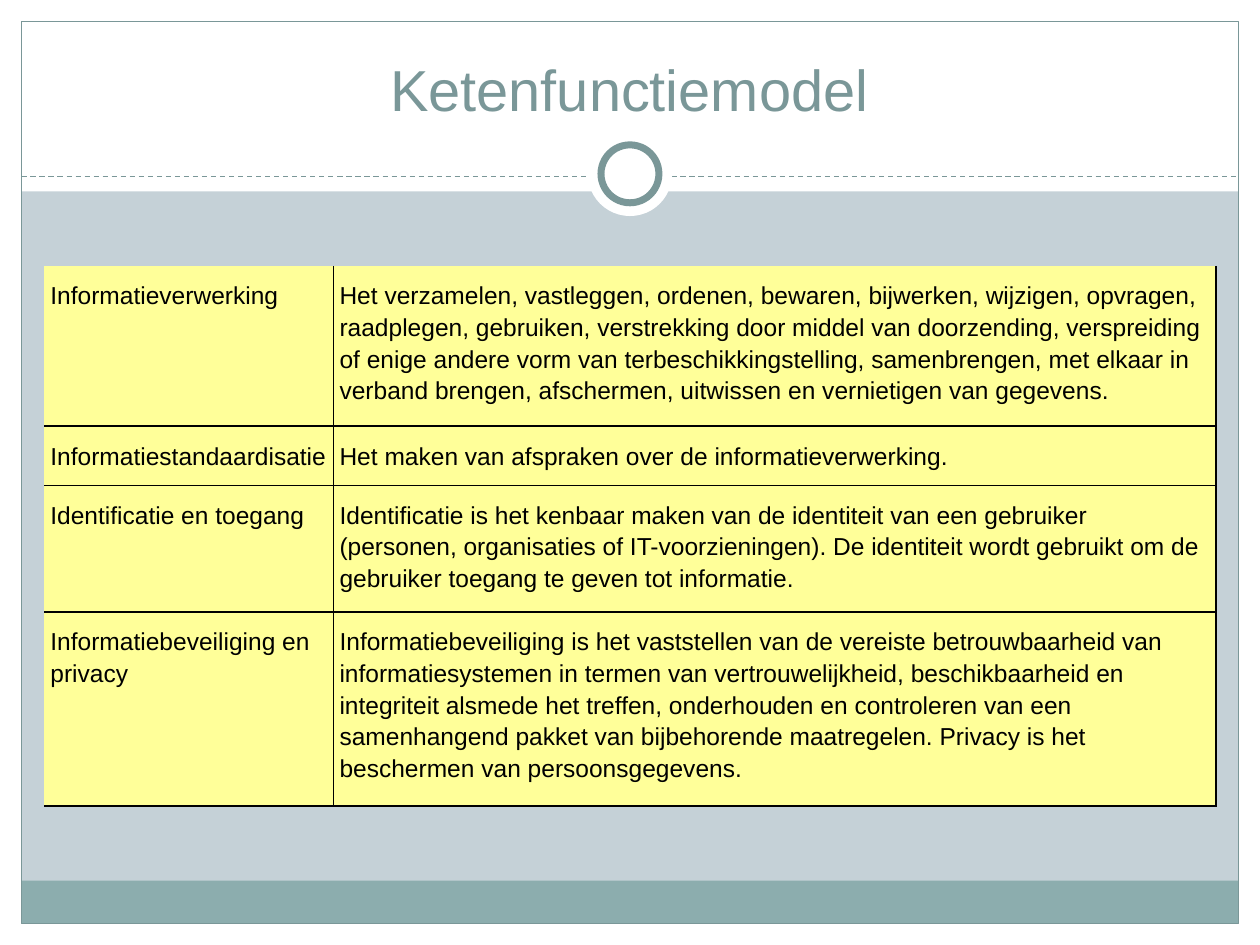
from lxml.etree import SubElement
from pptx import Presentation
from pptx.dml.color import RGBColor
from pptx.enum.dml import MSO_LINE
from pptx.enum.shapes import MSO_CONNECTOR, MSO_SHAPE
from pptx.enum.text import MSO_ANCHOR, PP_ALIGN
from pptx.oxml.ns import qn
from pptx.util import Inches, Pt

COLS, ROWS = 100, 75  # square grid cells over the whole slide
EDGE = 1.7
MID = COLS / 2
RING = 13.8  # row of the ring's centre
FONT = "Arial"
HUES = {"back": "C5D1D7", "white": "FFFFFF", "band": "8CADAE",
        "line": "7A9798", "cell": "FFFF99", "ink": "000000"}
TERMS = [
    ("Informatieverwerking",
     "Het verzamelen, vastleggen, ordenen, bewaren, bijwerken, wijzigen, "
     "opvragen, raadplegen, gebruiken, verstrekking door middel van "
     "doorzending, verspreiding of enige andere vorm van "
     "terbeschikkingstelling, samenbrengen, met elkaar in verband brengen, "
     "afschermen, uitwissen en vernietigen van gegevens."),
    ("Informatiestandaardisatie",
     "Het maken van afspraken over de informatieverwerking."),
    ("Identificatie en toegang",
     "Identificatie is het kenbaar maken van de identiteit van een gebruiker "
     "(personen, organisaties of IT-voorzieningen). De identiteit wordt "
     "gebruikt om de gebruiker toegang te geven tot informatie."),
    ("Informatiebeveiliging en privacy",
     "Informatiebeveiliging is het vaststellen van de vereiste "
     "betrouwbaarheid van informatiesystemen in termen van vertrouwelijkheid, "
     "beschikbaarheid en integriteit alsmede het treffen, onderhouden en "
     "controleren van een samenhangend pakket van bijbehorende maatregelen. "
     "Privacy is het beschermen van persoonsgegevens."),
]


def grid(*units):
    return [Inches(unit / 10) for unit in units]


def hue(name):
    return RGBColor.from_string(HUES[name])


def style(para, size, color):
    for run in para.runs:
        run.font.name = FONT
        run.font.size = Pt(size)
        run.font.color.rgb = hue(color)


def shape(slide, kind, box, fill=None, line=None, width=0.75):
    item = slide.shapes.add_shape(kind, *grid(*box))
    item.shadow.inherit = False
    if fill:
        item.fill.solid()
        item.fill.fore_color.rgb = hue(fill)
    else:
        item.fill.background()
    if line:
        item.line.color.rgb = hue(line)
        item.line.width = Pt(width)
    else:
        item.line.fill.background()


def disc(slide, size, **look):
    box = (MID - size / 2, RING - size / 2, size, size)
    shape(slide, MSO_SHAPE.OVAL, box, "white", **look)


def dash(slide, row):
    item = slide.shapes.add_connector(
        MSO_CONNECTOR.STRAIGHT, *grid(EDGE, row, COLS - EDGE, row))
    item.line.color.rgb = hue("line")
    item.line.width = Pt(0.75)
    item.line.dash_style = MSO_LINE.DASH
    SubElement(item._element.spPr, qn("a:effectLst"))


def frame(slide):
    rect = MSO_SHAPE.RECTANGLE
    for box in [(0, ROWS - EDGE, COLS, EDGE), (0, 0, COLS, 15.2),
                (0, 0, EDGE, ROWS), (COLS - EDGE, 0, EDGE, ROWS)]:
        shape(slide, rect, box, "white")
    wide, high = COLS - 2 * EDGE, ROWS - 2 * EDGE
    shape(slide, rect, (EDGE, 69.9, wide, 3.4), "band")
    shape(slide, rect, (EDGE, EDGE, wide, high), line="line")
    dash(slide, 14)
    disc(slide, 6.7)
    disc(slide, 4.6, line="line", width=4)


def title(slide, text):
    box = slide.shapes.add_textbox(*grid(3.3, 2.5, 93.3, 8.3)).text_frame
    box.word_wrap = True
    box.vertical_anchor = MSO_ANCHOR.BOTTOM
    box.margin_left = box.margin_right = Inches(0.1)
    box.margin_top = box.margin_bottom = Inches(0.1)
    box.text = text
    para = box.paragraphs[0]
    para.alignment = PP_ALIGN.CENTER
    style(para, 33, "line")


def border(cell, sides):
    """Rule the given sides and clear the others; call before filling."""
    props = cell._tc.get_or_add_tcPr()
    for side in "LRTB":
        line = SubElement(props, qn(f"a:ln{side}"), w=str(Pt(1)))
        if side in sides:
            fill = SubElement(line, qn("a:solidFill"))
            SubElement(fill, qn("a:srgbClr"), val=HUES["ink"])
        else:
            SubElement(line, qn("a:noFill"))


def write(cell, text):
    cell.margin_left = cell.margin_right = Inches(0.05)
    cell.margin_top = cell.margin_bottom = Inches(0.1)
    cell.text = text
    para = cell.text_frame.paragraphs[0]
    para.line_spacing = 1.15
    style(para, 14, "ink")


def table(slide, terms):
    widths, heights = grid(22.95, 70.05), grid(12.5, 4.6, 9.9, 14.6)
    left, top = grid(3.5, 21.1)
    grille = slide.shapes.add_table(
        len(terms), 2, left, top, sum(widths), sum(heights)).table
    grille.first_row = grille.horz_banding = False
    for col, width in zip(grille.columns, widths):
        col.width = width
    for r, (row, texts) in enumerate(zip(grille.rows, terms)):
        row.height = heights[r]
        for c, (cell, text) in enumerate(zip(row.cells, texts)):
            border(cell, "RB" + "L" * (c > 0) + "T" * (r > 0))
            cell.fill.solid()
            cell.fill.fore_color.rgb = hue("cell")
            write(cell, text)


def main():
    deck = Presentation()
    deck.slide_width, deck.slide_height = grid(COLS, ROWS)
    slide = deck.slides.add_slide(deck.slide_layouts[6])
    slide.background.fill.solid()
    slide.background.fill.fore_color.rgb = hue("back")
    frame(slide)
    title(slide, "Ketenfunctiemodel")
    table(slide, TERMS)
    deck.save("out.pptx")


if __name__ == "__main__":
    main()
